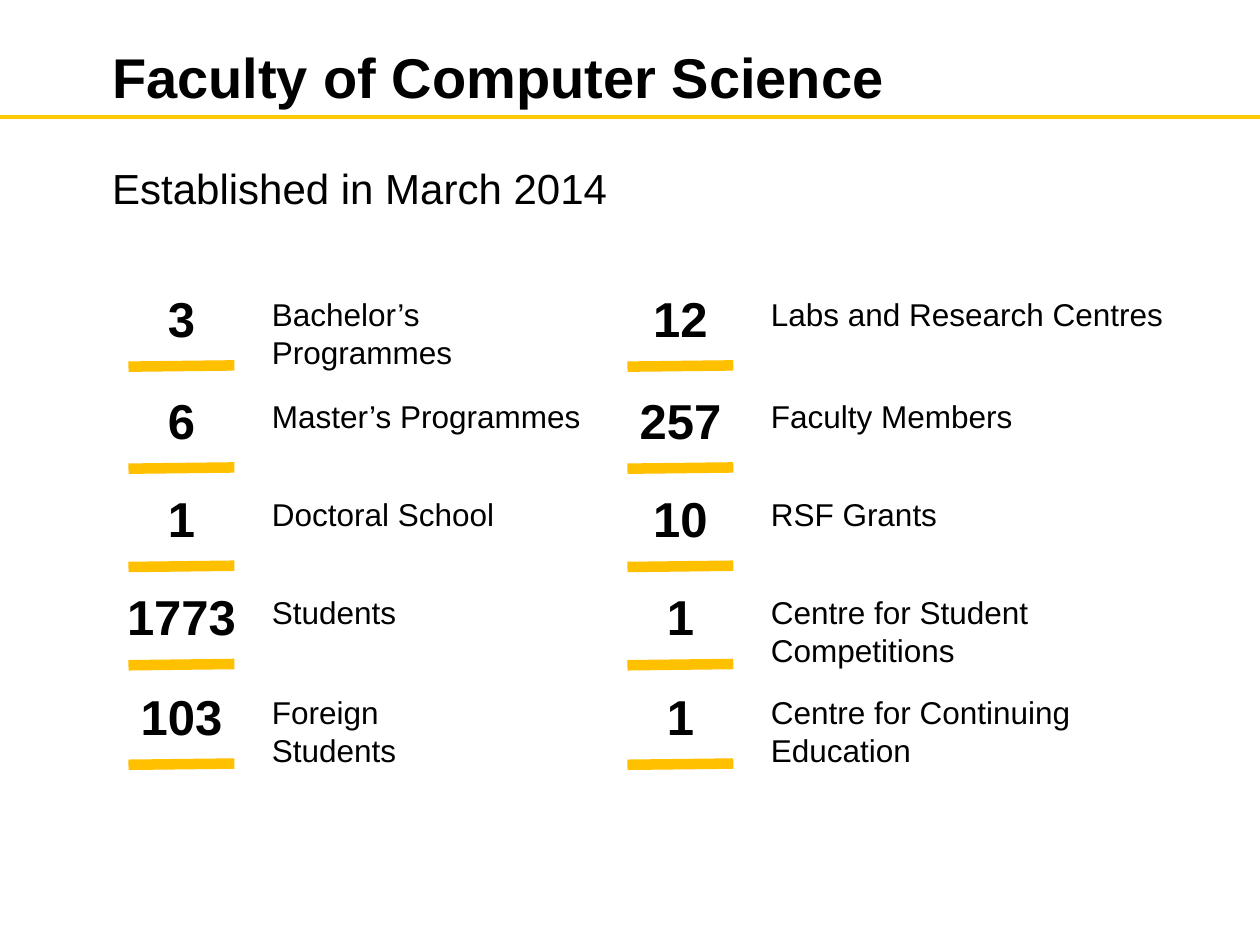
import pptx
import pptx.util
from pptx.dml.color import RGBColor
from pptx.enum.shapes import MSO_CONNECTOR
from pptx.enum.text import MSO_ANCHOR, MSO_AUTO_SIZE, PP_ALIGN
from pptx.oxml.ns import qn
from lxml import etree

TITLE = "Faculty of Computer Science"
SUBTITLE = "Established in March 2014"

# Each column: left edge of its rules, then (number, label, label width)
COLUMNS = [
    (1.02, [
        ("3", "Bachelor’s Programmes", 2.6),
        ("6", "Master’s Programmes", 3.74),
        ("1", "Doctoral School", 2.86),
        ("1773", "Students", 1.56),
        ("103", "Foreign Students", 2.07),
    ]),
    (4.98, [
        ("12", "Labs and Research Centres", 3.38),
        ("257", "Faculty Members", 2.86),
        ("10", "RSF Grants", 3.73),
        ("1", "Centre for Student Competitions", 3.73),
        ("1", "Centre for Continuing Education", 3.61),
    ]),
]
ROW_TOPS = (2.29, 3.1, 3.88, 4.66, 5.45)

WIDTH, HEIGHT = 10, 7.5
RULE_WIDTH = 0.84
RULE_DROP = 0.62
NUMBER_WIDTH = 1.12
LABEL_OFFSET = 1.04

BLACK = RGBColor(0x00, 0x00, 0x00)
YELLOW = RGBColor(0xFF, 0xCA, 0x05)
AMBER = RGBColor(0xFF, 0xC0, 0x00)


def inches(*values):
    return [pptx.util.Inches(value) for value in values]


def write(shape, text, size, bold=False, align=PP_ALIGN.LEFT):
    frame = shape.text_frame
    frame.word_wrap = True
    frame.auto_size = MSO_AUTO_SIZE.NONE
    frame.vertical_anchor = MSO_ANCHOR.TOP
    frame.text = text
    paragraph = frame.paragraphs[0]
    paragraph.alignment = align
    paragraph.font.name = "Arial"
    paragraph.font.size = pptx.util.Pt(size)
    paragraph.font.bold = bold
    paragraph.font.color.rgb = BLACK
    return paragraph


def fill_placeholder(shape, text, top, height, size, bold=False):
    shape.left, shape.top, shape.width, shape.height = inches(0, top, WIDTH, height)
    paragraph = write(shape, text, size, bold)
    paragraph.space_before = pptx.util.Pt(0)
    properties = paragraph._p.get_or_add_pPr()
    properties.set("marL", str(pptx.util.Inches(0.79)))
    properties.set("indent", "0")
    bullet = etree.Element(qn("a:buNone"))
    properties.find(qn("a:spcBef")).addnext(bullet)


def add_rule(slide, start, end, color, weight):
    rule = slide.shapes.add_connector(MSO_CONNECTOR.STRAIGHT, *inches(*start, *end))
    rule.line.color.rgb = color
    rule.line.width = pptx.util.Pt(weight)
    etree.SubElement(rule._element.spPr, qn("a:effectLst"))


def add_fact(slide, left, top, number, label, label_width):
    rule_top = top + RULE_DROP
    add_rule(slide, (left, rule_top), (left + RULE_WIDTH, rule_top - 0.01), AMBER, 6)

    number_left = left + (RULE_WIDTH - NUMBER_WIDTH) / 2
    number_box = slide.shapes.add_textbox(*inches(number_left, top, NUMBER_WIDTH, 0.53))
    paragraph = write(number_box, number, 28, True, PP_ALIGN.CENTER)
    paragraph.line_spacing = pptx.util.Pt(30)

    label_box = slide.shapes.add_textbox(
        *inches(left + LABEL_OFFSET, top, label_width, 0.4))
    write(label_box, label, 18)


def main():
    presentation = pptx.Presentation()
    presentation.slide_width, presentation.slide_height = inches(WIDTH, HEIGHT)
    slide = presentation.slides.add_slide(presentation.slide_layouts[1])

    # Heading
    fill_placeholder(slide.shapes.title, TITLE, 0.29, 0.64, 32, True)
    fill_placeholder(slide.placeholders[1], SUBTITLE, 1.24, 0.5, 24)
    add_rule(slide, (0, 0.93), (WIDTH, 0.93), YELLOW, 2.25)

    # Facts in two columns
    for left, facts in COLUMNS:
        for top, fact in zip(ROW_TOPS, facts):
            add_fact(slide, left, top, *fact)

    presentation.save("out.pptx")


if __name__ == "__main__":
    main()
